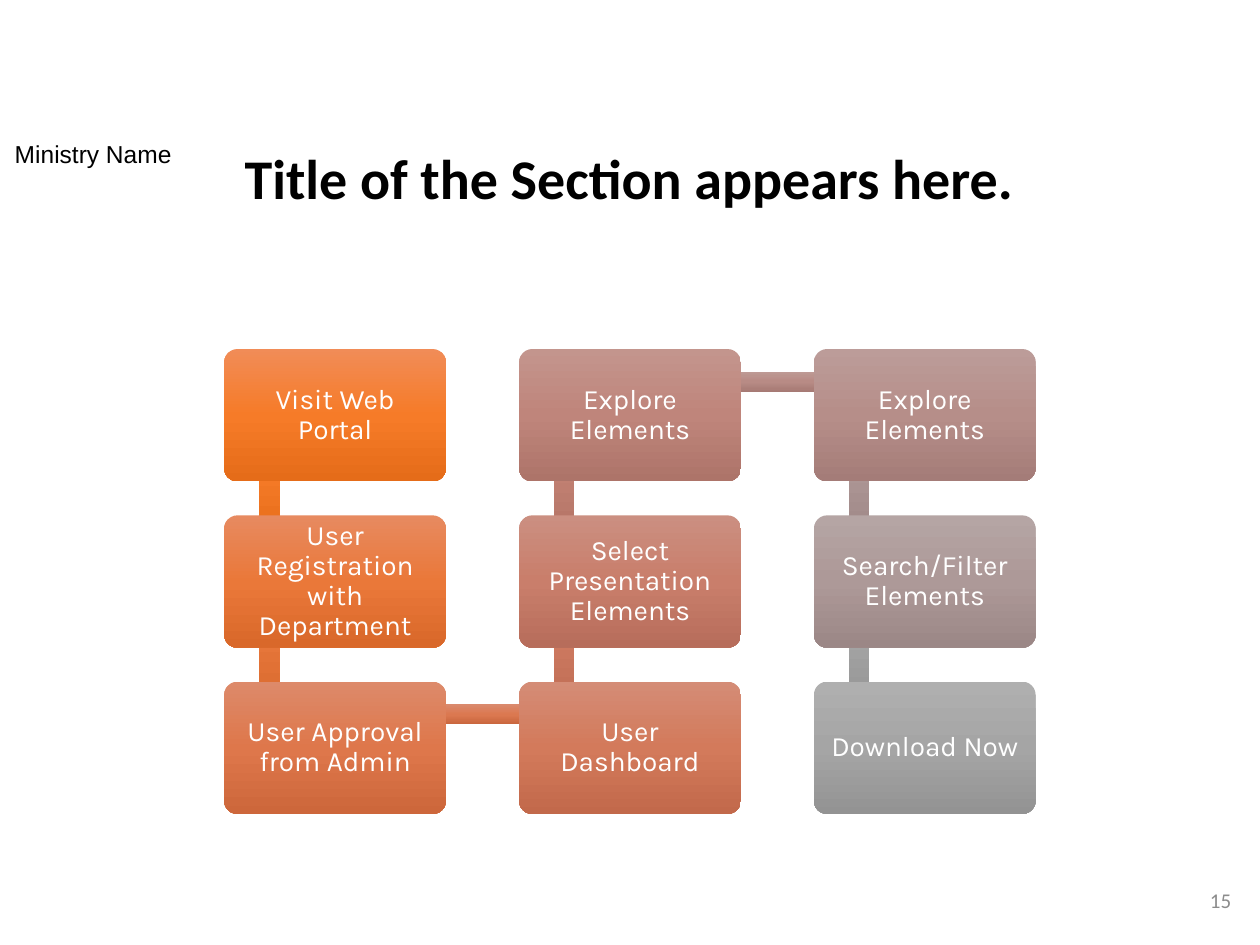
from copy import deepcopy

from pptx import Presentation
from pptx.dml.color import RGBColor
from pptx.enum.shapes import MSO_SHAPE
from pptx.enum.text import MSO_ANCHOR, PP_ALIGN
from pptx.oxml.ns import qn
from pptx.util import Inches, Pt

COLORS = {"text": "000000", "step text": "FFFFFF", "page number": "8C8C8C"}

# Grid of steps, in inches
LEFT, TOP = 1.78, 2.77
COLUMN, ROW = 2.34, 1.32
BOX_WIDTH, BOX_HEIGHT = 1.76, 1.05
BAR = 0.16

# Column, row, label, box gradient, gradient of the bar to the next step
STEPS = [
    (0, 0, "Visit Web Portal", "F18C57 F67B28 E56C19", "F18C57 F67B28 E56C19"),
    (0, 1, "User Registration with Department", "E78A60 EA7839 D9682A", "E58A61 E8783C D7682C"),
    (0, 2, "User Approval from Admin", "DD8A6A DE774B CD673B", "DA8A6E DB7850 CA673F"),
    (1, 2, "User Dashboard", "D48C76 D37A5B C2694B", "D08D7B CF7B62 BD6B52"),
    (1, 1, "Select Presentation Elements", "CB8F81 C97E6B B76D5B", "C79288 C38274 B17163"),
    (1, 0, "Explore Elements", "C3958D BF857B AD7469", "BE9A95 B88B85 A67A74"),
    (2, 0, "Explore Elements", "BC9C99 B68E89 A47C78", "B6A4A2 AE9796 9C8584"),
    (2, 1, "Search/Filter Elements", "B5A5A4 AD9998 9B8786", "AFAFAF A5A5A5 939393"),
    (2, 2, "Download Now", "AFAFAF A5A5A5 939393", None),
]

deck = Presentation()
deck.slide_width, deck.slide_height = Inches(10), Inches(7.5)
page = deck.slides.add_slide(deck.slide_layouts.get_by_name("Content with Caption"))


def add_block(kind, left, top, width, height, gradient):
    """Add a borderless shape with a three-stop gradient from top to bottom."""
    block = page.shapes.add_shape(kind, Inches(left), Inches(top), Inches(width), Inches(height))
    block.shadow.inherit = False
    block.line.fill.background()
    block.fill.gradient()
    block.fill.gradient_angle = 270
    first_stop = block._element.spPr.find(".//" + qn("a:gs"))
    first_stop.addnext(deepcopy(first_stop))
    for stop, position, color in zip(block.fill.gradient_stops, (0, 0.5, 1), gradient.split()):
        stop.position = position
        stop.color.rgb = RGBColor.from_string(color)
    return block


def write(box, text, font, size, color, align, anchor, bold=False):
    """Put one formatted paragraph into a box."""
    frame = box.text_frame
    frame.word_wrap = True
    frame.vertical_anchor = anchor
    frame.text = text
    paragraph = frame.paragraphs[0]
    paragraph.alignment = align
    paragraph.line_spacing = 0.9
    paragraph.space_before = Pt(0)
    paragraph.font.name = font
    paragraph.font.size = Pt(size)
    paragraph.font.bold = bold
    paragraph.font.color.rgb = RGBColor.from_string(COLORS[color])


# Steps, each with the bar that leads to the next one behind it
for index, (column, row, label, box_gradient, bar_gradient) in enumerate(STEPS):
    left, top = LEFT + column * COLUMN, TOP + row * ROW
    if bar_gradient:
        next_column, next_row = STEPS[index + 1][:2]
        if next_column > column:
            place = (left + 0.37, top + 0.18, COLUMN, BAR)
        else:
            place = (left + 0.28, TOP + min(row, next_row) * ROW + 0.26, BAR, ROW)
        add_block(MSO_SHAPE.RECTANGLE, *place, bar_gradient)
    box = add_block(MSO_SHAPE.ROUNDED_RECTANGLE, left, top, BOX_WIDTH, BOX_HEIGHT, box_gradient)
    box.adjustments[0] = 0.1
    write(box, label, "Karla", 16, "step text", PP_ALIGN.CENTER, MSO_ANCHOR.MIDDLE)

# Page number
number = page.shapes.add_textbox(Inches(7.62), Inches(6.96), Inches(2.25), Inches(0.4))
write(number, "15", "Calibri", 12, "page number", PP_ALIGN.RIGHT, MSO_ANCHOR.MIDDLE)

# Title and ministry name
title, content, ministry = page.placeholders
content._element.getparent().remove(content._element)
title.left, title.top, title.width, title.height = map(Inches, (1.65, 1.15, 6.69, 0.79))
write(title, "Title of the Section appears here.", "Calibri", 32, "text",
      PP_ALIGN.CENTER, MSO_ANCHOR.TOP, bold=True)
ministry.left, ministry.top, ministry.width, ministry.height = map(Inches, (0, 1.08, 1.48, 0.65))
write(ministry, "Ministry Name", "Arial", 14, "text", PP_ALIGN.CENTER, MSO_ANCHOR.TOP)

deck.save("out.pptx")
